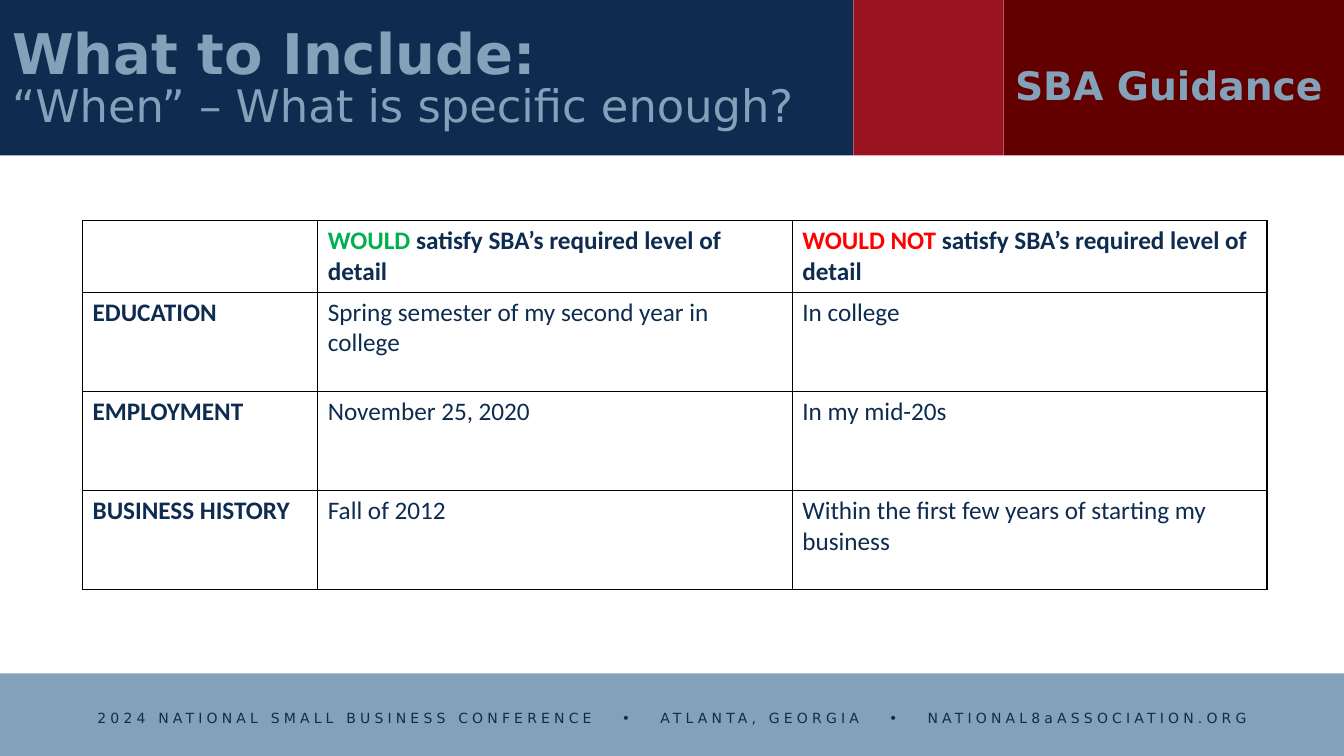
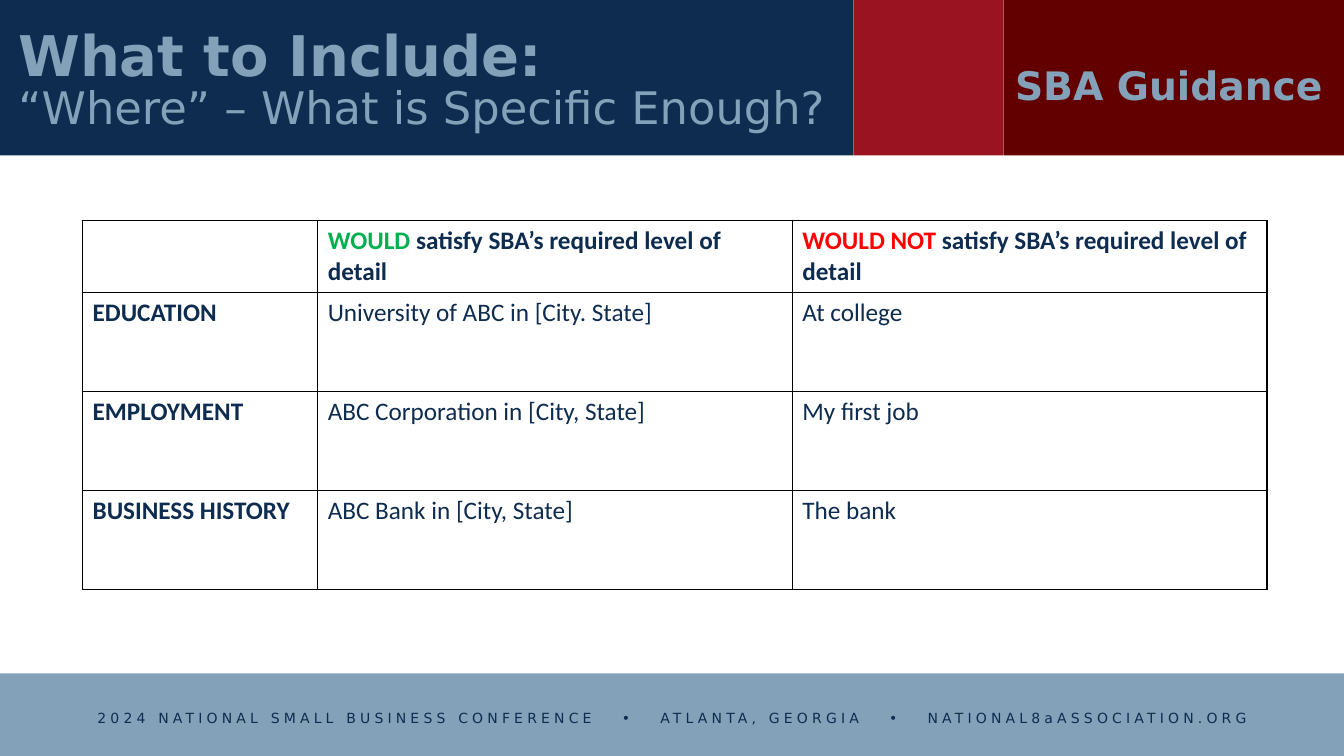
from lxml import etree
from pptx import Presentation
from pptx.dml.color import RGBColor
from pptx.enum.shapes import MSO_SHAPE
from pptx.enum.text import MSO_ANCHOR, MSO_AUTO_SIZE, PP_ALIGN
from pptx.oxml.ns import qn
from pptx.util import Pt

RECT = MSO_SHAPE.RECTANGLE
BOTTOM = MSO_ANCHOR.BOTTOM
NO_AUTOFIT = MSO_AUTO_SIZE.NONE
LEFT, CENTER = PP_ALIGN.LEFT, PP_ALIGN.CENTER

NAVY = RGBColor(0x0E, 0x2C, 0x4F)
RED = RGBColor(0x99, 0x13, 0x20)
MAROON = RGBColor(0x62, 0x00, 0x00)
STEEL = RGBColor(0x83, 0xA2, 0xB9)
GREEN = RGBColor(0x00, 0xB0, 0x50)
BRIGHT_RED = RGBColor(0xFF, 0x00, 0x00)

HEAD_FONT, TABLE_FONT = "DejaVu Sans", "Calibri"
WIDTH, HEIGHT = 960, 540
HEADER_H, FOOTER_TOP = 111, 481
BANDS = [  # left, top, width, height, colour
    (0, 0, 609.5, HEADER_H, NAVY),
    (609.5, 0, 107.5, HEADER_H, RED),
    (717, 0, 243, HEADER_H, MAROON),
    (0, FOOTER_TOP, WIDTH, HEIGHT - FOOTER_TOP, STEEL),
]
FOOTER = ["2024 NATIONAL SMALL BUSINESS CONFERENCE", "ATLANTA, GEORGIA",
          "NATIONAL8aASSOCIATION.ORG"]
FOOTER_TRACKING, FOOTER_GAP = 3, 15.35

TITLE = "What to Include:"
TAG = "SBA Guidance"
VERDICTS = [("WOULD", GREEN), ("WOULD NOT", BRIGHT_RED)]
CRITERION = " satisfy SBA’s required level of detail"
TOPICS = ["EDUCATION", "EMPLOYMENT", "BUSINESS HISTORY"]
COL_WIDTHS = [168, 339, 339]
ROW_HEIGHTS = [50, 70.8, 70.8, 70.8]

SLIDES = [
    {"subtitle": "“When” – What is specific enough?",
     "title_box": (1.5, 6.5, 616, 91.5),
     "examples": [
         ("Spring semester of my second year in college", "In college"),
         ("November 25, 2020", "In my mid-20s"),
         ("Fall of 2012", "Within the first few years of starting my business"),
     ]},
    {"subtitle": "“Where” – What is Specific Enough?",
     "title_box": (6, 12.5, 635, 86.5),
     "examples": [
         ("University of ABC in [City. State]", "At college"),
         ("ABC Corporation in [City, State]", "My first job"),
         ("ABC Bank in [City, State]", "The bank"),
     ]},
]


def points(*values):
    return [Pt(v) for v in values]


def add_run(p, text, size, color, bold=False, font=HEAD_FONT):
    r = p.add_run()
    r.text = text
    r.font.name, r.font.size, r.font.bold = font, Pt(size), bold
    r.font.color.rgb = color
    return r


def add_text_box(slide, *box):
    sp = slide.shapes.add_textbox(*points(*box))
    sp.text_frame.word_wrap = True
    return sp


def add_bands_and_footer(layout, slide):
    """Draw the shared parts on a slide, then move them to its layout."""
    parts = []
    for *box, color in BANDS:
        sp = slide.shapes.add_shape(RECT, *points(*box))
        sp.shadow.inherit = False
        sp.fill.solid()
        sp.fill.fore_color.rgb = color
        sp.line.fill.background()
        parts.append(sp)
    sp = add_text_box(slide, 0, 503.5, WIDTH, 19.5)
    parts.append(sp)
    p = sp.text_frame.paragraphs[0]
    p.alignment = CENTER
    for i, item in enumerate(FOOTER):
        for text in ([" ", "•", " "] if i else []) + [item]:
            r = add_run(p, text, 10, NAVY)
            tracking = FOOTER_GAP if text == " " else FOOTER_TRACKING
            r._r.get_or_add_rPr().set("spc", str(round(tracking * 100)))
    for i, sp in enumerate(parts):
        layout.shapes.element.insert(2 + i, sp.element)


def add_heading(slide, subtitle, box):
    sp = slide.shapes.title
    sp.left, sp.top, sp.width, sp.height = points(*box)
    tf = sp.text_frame
    tf.auto_size, tf.vertical_anchor = NO_AUTOFIT, BOTTOM
    p = tf.paragraphs[0]
    p.alignment, p.line_spacing = LEFT, 0.85
    add_run(p, TITLE, 40, STEEL, bold=True)
    p.add_line_break()
    br = p._p.find(qn("a:br"))
    etree.SubElement(br, qn("a:rPr"), sz="4000")
    add_run(p, subtitle, 32, STEEL)


def add_tag(slide):
    tf = add_text_box(slide, 718, 0, 236, 81).text_frame
    tf.vertical_anchor = BOTTOM
    p = tf.paragraphs[0]
    p.line_spacing = 0.85
    add_run(p, TAG, 28, STEEL, bold=True)


def style_cell(cell):
    """Give the cell thin black borders and no fill."""
    tcPr = cell._tc.get_or_add_tcPr()
    for side in ("lnL", "lnR", "lnT", "lnB"):
        ln = etree.SubElement(tcPr, qn("a:" + side), w=str(Pt(1)))
        fill = etree.SubElement(ln, qn("a:solidFill"))
        etree.SubElement(fill, qn("a:srgbClr"), val="000000")
    cell.fill.background()


def add_examples_table(slide, examples):
    header = [[]] + [[(word, color, True), (CRITERION, NAVY, True)]
                     for word, color in VERDICTS]
    rows = [header]
    for topic, texts in zip(TOPICS, examples):
        rows.append([[(topic, NAVY, True)]] + [[(t, NAVY, False)] for t in texts])

    table = slide.shapes.add_table(
        len(rows), len(COL_WIDTHS),
        *points(59, 157.5, sum(COL_WIDTHS), sum(ROW_HEIGHTS))).table
    table.first_row = table.horz_banding = False
    for col, width in zip(table.columns, COL_WIDTHS):
        col.width = Pt(width)
    for row, height, contents in zip(table.rows, ROW_HEIGHTS, rows):
        row.height = Pt(height)
        for cell, runs in zip(row.cells, contents):
            style_cell(cell)
            p = cell.text_frame.paragraphs[0]
            for text, color, bold in runs:
                add_run(p, text, 18, color, bold, TABLE_FONT)


def main():
    prs = Presentation()
    prs.slide_width, prs.slide_height = points(WIDTH, HEIGHT)
    layout = prs.slide_layouts.get_by_name("Title Only")
    for i, content in enumerate(SLIDES):
        slide = prs.slides.add_slide(layout)
        if i == 0:
            add_bands_and_footer(layout, slide)
        add_heading(slide, content["subtitle"], content["title_box"])
        add_examples_table(slide, content["examples"])
        add_tag(slide)
    prs.save("out.pptx")


if __name__ == "__main__":
    main()
